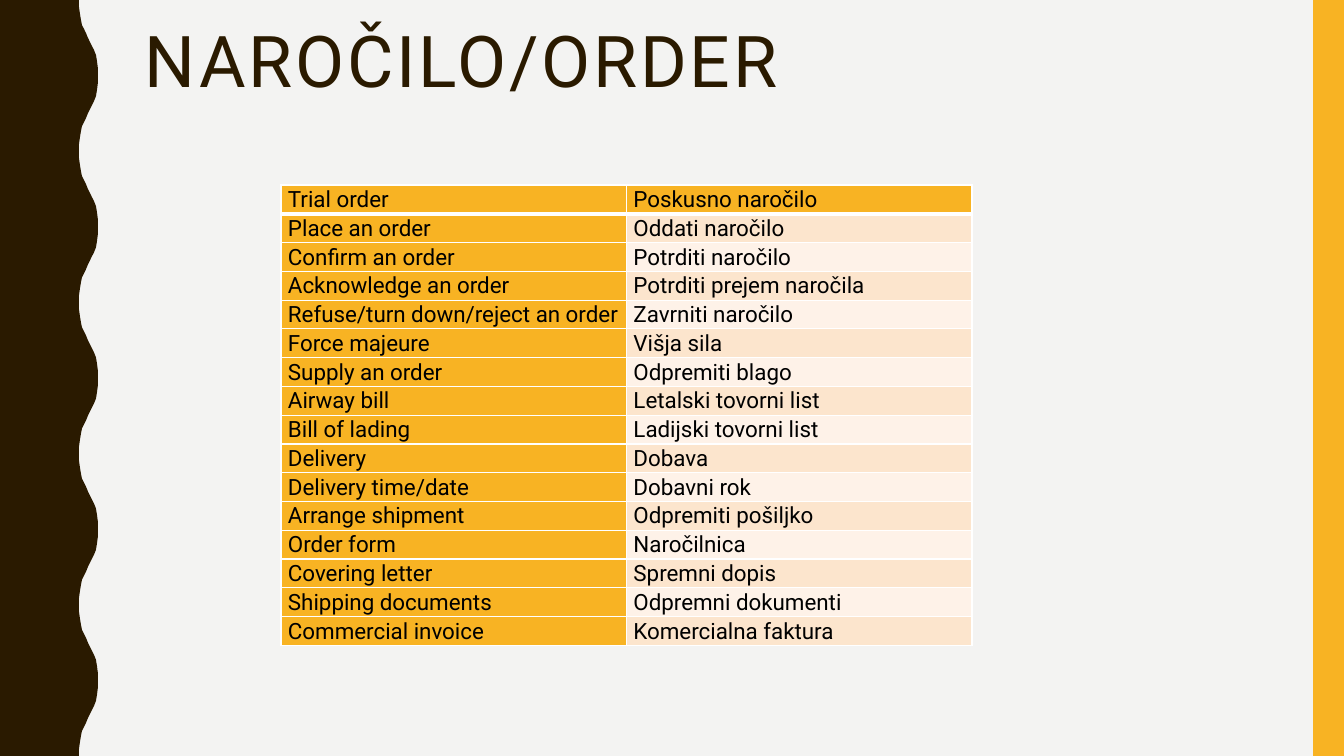
from lxml.etree import SubElement
from pptx import Presentation
from pptx.dml.color import RGBColor
from pptx.enum.shapes import MSO_SHAPE
from pptx.enum.text import MSO_ANCHOR
from pptx.oxml.ns import qn
from pptx.util import Inches, Pt

SCALE = Inches(7.5) / 756
PAGE_WIDTH, PAGE_HEIGHT = 1344, 756
FONT = "Roboto"
BROWN, GOLD, WHITE, BLACK = "2A1A00", "F8B323", "FFFFFF", "000000"
BANDS = ("FEF2E8", "FCE5CD")
WAVE_COUNT = 5
HALF_WAVE = [
    (79, 0), (79, 7), (80, 14), (81, 20), (82, 25), (84, 29), (86, 33), (88, 38),
    (90, 42), (92, 46), (94, 50), (96, 55), (97, 61), (98, 69), (98, 76),
]
TERMS = [
    ("Trial order", "Poskusno naročilo"),
    ("Place an order", "Oddati naročilo"),
    ("Confirm an order", "Potrditi naročilo"),
    ("Acknowledge an order", "Potrditi prejem naročila"),
    ("Refuse/turn down/reject an order", "Zavrniti naročilo"),
    ("Force majeure", "Višja sila"),
    ("Supply an order", "Odpremiti blago"),
    ("Airway bill", "Letalski tovorni list"),
    ("Bill of lading", "Ladijski tovorni list"),
    ("Delivery", "Dobava"),
    ("Delivery time/date", "Dobavni rok"),
    ("Arrange shipment", "Odpremiti pošiljko"),
    ("Order form", "Naročilnica"),
    ("Covering letter", "Spremni dopis"),
    ("Shipping documents", "Odpremni dokumenti"),
    ("Commercial invoice", "Komercialna faktura"),
]


def px(length):
    return round(length * SCALE)


def color(value):
    return RGBColor.from_string(value)


def paint(shape, fill):
    shape.shadow.inherit = False
    shape.fill.solid()
    shape.fill.fore_color.rgb = color(fill)
    shape.line.fill.background()


def write(para, text, size, ink, line_spacing):
    para.line_spacing = line_spacing
    span = para.add_run()
    span.text = text
    span.font.name = FONT
    span.font.size = Pt(size)
    span.font.bold = False
    span.font.color.rgb = color(ink)
    return span


def add_wavy_edge(page):
    period = PAGE_HEIGHT / WAVE_COUNT
    wave = HALF_WAVE + [(x, period - y) for x, y in reversed(HALF_WAVE[:-1])]
    points = [(px(x), px(y + index * period)) for index in range(WAVE_COUNT) for x, y in wave]
    outline = page.shapes.build_freeform(0, 0)
    outline.add_line_segments(points + [(0, px(PAGE_HEIGHT))], close=True)
    paint(outline.convert_to_shape(), BROWN)


def add_side_bar(page):
    left = 1313
    bar = page.shapes.add_shape(
        MSO_SHAPE.RECTANGLE, px(left), 0, px(PAGE_WIDTH - left), px(PAGE_HEIGHT))
    paint(bar, GOLD)


def add_title(page, text):
    box = page.shapes.add_textbox(px(135), px(21), px(1122), px(164))
    frame = box.text_frame
    frame.word_wrap = True
    frame.vertical_anchor = MSO_ANCHOR.TOP
    span = write(frame.paragraphs[0], text, 51, BROWN, 0.9)
    span.font._element.set("spc", "200")


def add_border(cell, side, width):
    line = SubElement(cell._tc.get_or_add_tcPr(), qn(f"a:ln{side}"), w=str(Pt(width)))
    fill = SubElement(line, qn("a:solidFill"))
    SubElement(fill, qn("a:srgbClr"), val=WHITE)


def fill_cell(cell, text, row, column):
    cell.margin_left = cell.margin_right = px(7)
    cell.margin_top = cell.margin_bottom = 0
    widths = {"L": 1, "R": 1, "T": 3 if row == 1 else 1, "B": 3 if row == 0 else 1}
    for side, width in widths.items():
        add_border(cell, side, width)
    cell.fill.solid()
    cell.fill.fore_color.rgb = color(GOLD if row == 0 or column == 0 else BANDS[row % 2])
    write(cell.text_frame.paragraphs[0], text, 16, BLACK, 1.07)


def add_glossary(page):
    width, height = px(691), px(453)
    frame = page.shapes.add_table(len(TERMS), 2, px(281), px(185), width, height)
    table = frame.table
    table.first_row = table.horz_banding = False
    for column in table.columns:
        column.width = width // 2
    for row, terms in enumerate(TERMS):
        table.rows[row].height = height // len(TERMS)
        for column, text in enumerate(terms):
            fill_cell(table.cell(row, column), text, row, column)


def main():
    deck = Presentation()
    deck.slide_width, deck.slide_height = px(PAGE_WIDTH), px(PAGE_HEIGHT)
    page = deck.slides.add_slide(deck.slide_layouts[6])
    page.background.fill.solid()
    page.background.fill.fore_color.rgb = color("F3F3F2")
    add_wavy_edge(page)
    add_side_bar(page)
    add_title(page, "NAROČILO/ORDER")
    add_glossary(page)
    deck.save("out.pptx")


if __name__ == "__main__":
    main()
